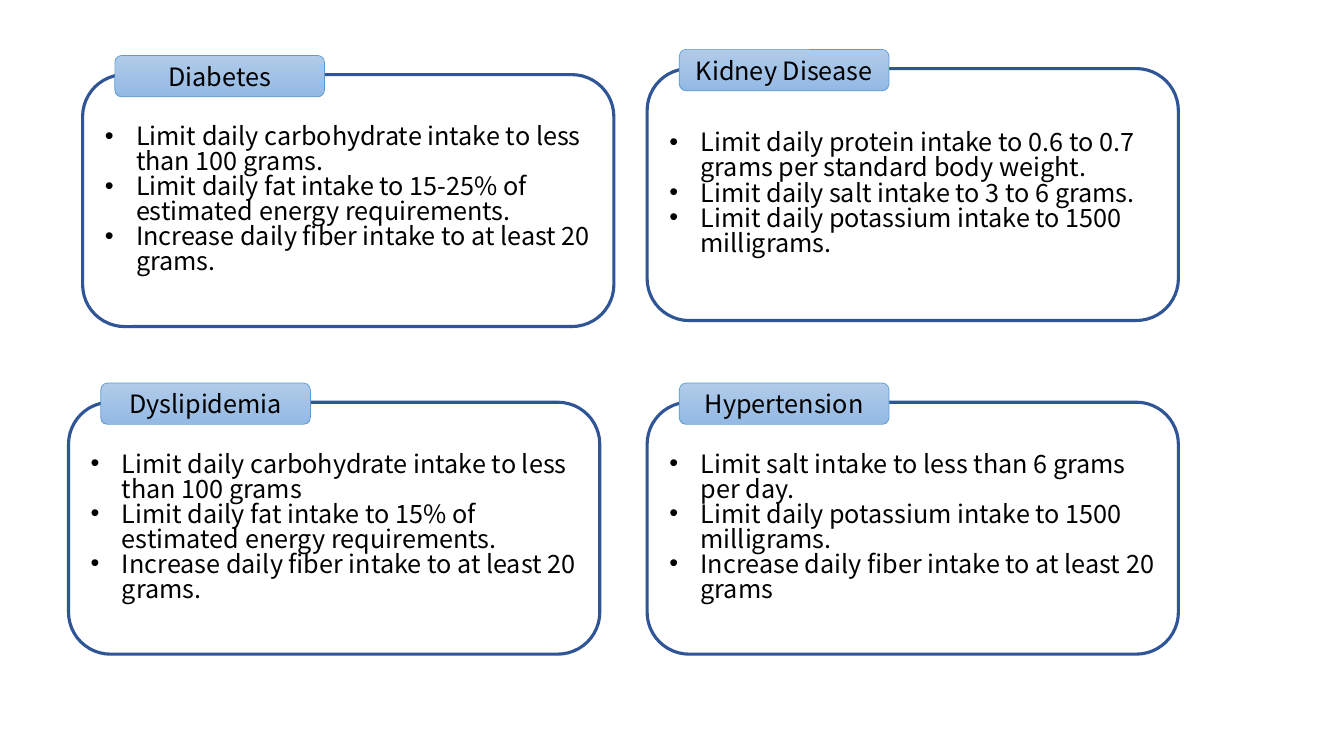
from lxml import etree
from pptx import Presentation
from pptx.dml.color import RGBColor
from pptx.enum.shapes import MSO_SHAPE
from pptx.enum.text import MSO_ANCHOR, PP_ALIGN
from pptx.oxml.ns import qn
from pptx.util import Inches, Pt

ROUNDED = MSO_SHAPE.ROUNDED_RECTANGLE
MIDDLE = MSO_ANCHOR.MIDDLE
LEFT, CENTER = PP_ALIGN.LEFT, PP_ALIGN.CENTER

COLORS = {
    "paper": "FFFFFF",
    "ink": "000000",
    "panel_edge": "2F5597",
    "tab_edge": "5B9BD5",
    "tab_top": "B1CBE9",
    "tab_bottom": "93B9E4",
}

# Left column, top row, condition, dietary advice
CONDITIONS = [
    (6.15, 9.87, "Diabetes", [
        "Limit daily carbohydrate intake to less than 100 grams.",
        "Limit daily fat intake to 15-25% of estimated energy requirements.",
        "Increase daily fiber intake to at least 20 grams.",
    ]),
    (5.1, 53.2, "Dyslipidemia", [
        "Limit daily carbohydrate intake to less than 100 grams",
        "Limit daily fat intake to 15% of estimated energy requirements.",
        "Increase daily fiber intake to at least 20 grams.",
    ]),
    (48.15, 9.07, "Kidney Disease", [
        "Limit daily protein intake to 0.6 to 0.7 grams per standard body weight.",
        "Limit daily salt intake to 3 to 6 grams.",
        "Limit daily potassium intake to 1500 milligrams.",
    ]),
    (48.15, 53.2, "Hypertension", [
        "Limit salt intake to less than 6 grams per day.",
        "Limit daily potassium intake to 1500 milligrams.",
        "Increase daily fiber intake to at least 20 grams",
    ]),
]


def color(name):
    return RGBColor.from_string(COLORS[name])


class DietSlide:
    """Draws on one slide, measured in a grid of 100 columns by 100 rows."""

    FONT = "Noto Sans CJK JP"
    SIZE = Pt(18)
    HANGING = Inches(0.31)
    PANEL_SIZE = (39.53, 33.33)
    TAB_SIZE = (15.6, 5.47)
    TAB_OFFSET = (2.4, -2.53)

    def __init__(self, deck):
        self.column = deck.slide_width / 100
        self.row = deck.slide_height / 100
        self.slide = deck.slides.add_slide(deck.slide_layouts[6])

    def rounded_box(self, left, top, size, edge, edge_width):
        width, height = size
        box = self.slide.shapes.add_shape(
            ROUNDED,
            round(left * self.column), round(top * self.row),
            round(width * self.column), round(height * self.row))
        box.shadow.inherit = False
        box.line.color.rgb = color(edge)
        box.line.width = Pt(edge_width)
        return box

    def set_text(self, box, lines, align=LEFT, bullet=None, spacing=None):
        frame = box.text_frame
        frame.word_wrap = True
        frame.vertical_anchor = MIDDLE
        for index, line in enumerate(lines):
            paragraph = frame.add_paragraph() if index else frame.paragraphs[0]
            paragraph.alignment = align
            if spacing:
                paragraph.line_spacing = spacing
            if bullet:
                properties = paragraph._p.get_or_add_pPr()
                properties.set("marL", str(self.HANGING))
                properties.set("indent", str(-self.HANGING))
                etree.SubElement(properties, qn("a:buFont"), typeface="Arial")
                etree.SubElement(properties, qn("a:buChar"), char=bullet)
            run = paragraph.add_run()
            run.text = line
            run.font.name = self.FONT
            run.font.size = self.SIZE
            run.font.color.rgb = color("ink")

    def panel(self, left, top, advice):
        panel = self.rounded_box(left, top, self.PANEL_SIZE, "panel_edge", 2.25)
        panel.fill.solid()
        panel.fill.fore_color.rgb = color("paper")
        self.set_text(panel, advice, bullet="•", spacing=0.83)

    def tab(self, left, top, condition):
        tab = self.rounded_box(left, top, self.TAB_SIZE, "tab_edge", 0.5)
        tab.fill.gradient()
        tab.fill.gradient_angle = 270
        for stop, shade in zip(tab.fill.gradient_stops, ("tab_top", "tab_bottom")):
            stop.color.rgb = color(shade)
        self.set_text(tab, [condition], align=CENTER)

    def card(self, left, top, condition, advice):
        """Add a panel of advice with its condition on a tab over the top edge."""
        across, down = self.TAB_OFFSET
        self.panel(left, top, advice)
        self.tab(left + across, top + down, condition)


def main():
    deck = Presentation()
    deck.slide_width, deck.slide_height = Inches(13.33), Inches(7.5)
    diet = DietSlide(deck)
    for condition in CONDITIONS:
        diet.card(*condition)
    deck.save("out.pptx")


if __name__ == "__main__":
    main()
